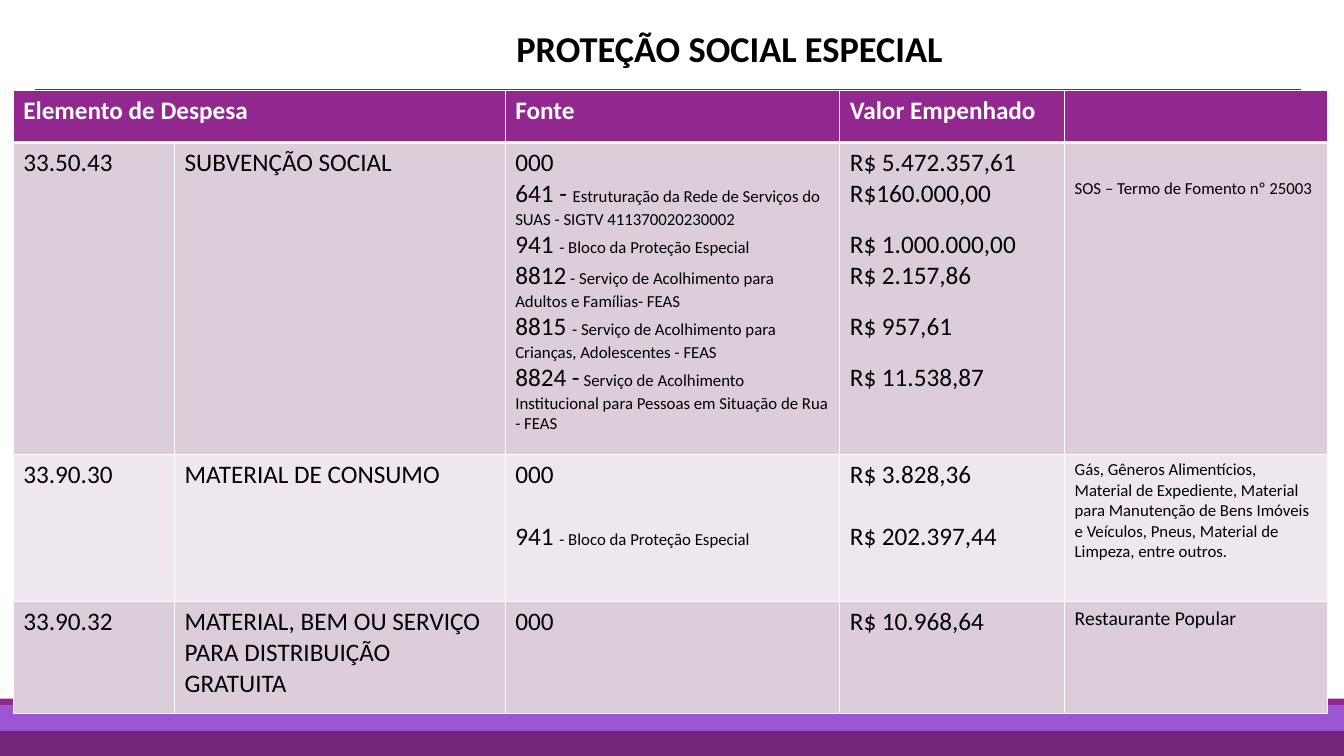
from lxml import etree
from pptx import Presentation
from pptx.dml.color import RGBColor
from pptx.enum.shapes import MSO_CONNECTOR, MSO_SHAPE
from pptx.enum.text import PP_ALIGN
from pptx.oxml.ns import qn
from pptx.util import Pt

RECT = MSO_SHAPE.RECTANGLE
STRAIGHT = MSO_CONNECTOR.STRAIGHT
LEFT, CENTER = PP_ALIGN.LEFT, PP_ALIGN.CENTER

COLORS = {
    "text": "000000", "white": "FFFFFF", "header": "92278F",
    "band": "9B57D3", "base": "6D1D6B", "rule": "632E62",
    "odd": "DCCDDB", "even": "EEE8EE",
}
FONT = "Calibri"
BIG, MEDIUM, SMALL = 18, 14, 12
BIG_LINE, SMALL_LINE = 22, 14.65

COL_WIDTHS = [115.2, 236.2, 239, 160.6, 187.9]
ROW_HEIGHTS = [37, 223, 105, 80]
HEADERS = ["Elemento de Despesa", "", "Fonte", "Valor Empenhado", ""]

# Sources: (code, description, space before); values: (amount, space before);
# note: (text, size, space above).
EXPENSES = [
    ("33.50.43", "SUBVENÇÃO SOCIAL",
     [("000", "", 0),
      ("641 - ", "Estruturação da Rede de Serviços do SUAS - SIGTV 411370020230002", 0),
      ("941 ", "- Bloco da Proteção Especial", 0),
      ("8812", " - Serviço de Acolhimento para Adultos e Famílias- FEAS", 0),
      ("8815 ", "- Serviço de Acolhimento para Crianças, Adolescentes - FEAS", 0),
      ("8824 -", " Serviço de Acolhimento Institucional para Pessoas em "
                 "Situação de Rua - FEAS", 0)],
     [("R$ 5.472.357,61", 0), ("R$160.000,00", 0), ("R$ 1.000.000,00", SMALL_LINE),
      ("R$ 2.157,86", 0), ("R$ 957,61", SMALL_LINE), ("R$ 11.538,87", SMALL_LINE)],
     ("SOS – Termo de Fomento nº 25003", SMALL, BIG_LINE)),
    ("33.90.30", "MATERIAL DE CONSUMO",
     [("000", "", 0), ("941 ", "- Bloco da Proteção Especial", BIG_LINE)],
     [("R$ 3.828,36", 0), ("R$ 202.397,44", BIG_LINE)],
     ("Gás, Gêneros Alimentícios, Material de Expediente, Material para "
      "Manutenção de Bens Imóveis e Veículos, Pneus, Material de Limpeza, "
      "entre outros.", SMALL, 0)),
    ("33.90.32", "MATERIAL, BEM OU SERVIÇO PARA DISTRIBUIÇÃO GRATUITA",
     [("000", "", 0)],
     [("R$ 10.968,64", 0)],
     ("Restaurante Popular", MEDIUM, 0)),
]


def rgb(name):
    return RGBColor.from_string(COLORS[name])


def add_text(p, text, size=BIG, color="text", bold=False, align=LEFT, before=0):
    """Append a formatted run to paragraph p."""
    p.alignment = align
    p.space_before = Pt(before)
    r = p.add_run()
    r.text = text
    r.font.name, r.font.size, r.font.bold = FONT, Pt(size), bold
    r.font.color.rgb = rgb(color)


def paragraph(tf, index):
    return tf.paragraphs[0] if index == 0 else tf.add_paragraph()


def add_bar(slide, left, top, width, height, color, alpha=None):
    sp = slide.shapes.add_shape(RECT, Pt(left), Pt(top), Pt(width), Pt(height))
    sp.shadow.inherit = False
    sp.line.fill.background()
    sp.fill.solid()
    sp.fill.fore_color.rgb = rgb(color)
    if alpha is not None:
        clr = sp.fill._xPr.find(".//" + qn("a:srgbClr"))
        etree.SubElement(clr, qn("a:alpha"), val=str(alpha * 1000))


def add_footer(slide, left, top, width, height):
    """Stack a thin strip, a band and a translucent base inside the box."""
    strip, base = 5, 18
    add_bar(slide, left, top + strip, width, height - strip, "band")
    add_bar(slide, left, top, width, strip, "header")
    add_bar(slide, left, top + height - base, width, base, "base", alpha=85)


def add_title(slide, left, top, width, height):
    """Write the heading in the box, with a rule across the slide below it."""
    rule_y = top + height + 10.7
    rule = slide.shapes.add_connector(STRAIGHT, Pt(25), Pt(rule_y), Pt(929.5), Pt(rule_y))
    rule.line.color.rgb = rgb("rule")
    rule.line.width = Pt(2.25)
    etree.SubElement(rule._element.spPr, qn("a:effectLst"))
    tf = slide.shapes.add_textbox(Pt(left), Pt(top), Pt(width), Pt(height)).text_frame
    tf.word_wrap = True
    add_text(tf.paragraphs[0], "PROTEÇÃO SOCIAL ESPECIAL", size=26, bold=True, align=CENTER)


def style_cell(cell, fill, top=1, bottom=1):
    """Give the cell white borders of the stated widths, then its fill."""
    tc_pr = cell._tc.get_or_add_tcPr()
    for side, width in (("L", 1), ("R", 1), ("T", top), ("B", bottom)):
        ln = etree.SubElement(tc_pr, qn("a:ln" + side), w=str(Pt(width)))
        solid = etree.SubElement(ln, qn("a:solidFill"))
        etree.SubElement(solid, qn("a:srgbClr"), val=COLORS["white"])
    cell.fill.solid()
    cell.fill.fore_color.rgb = rgb(fill)


def fill_expense_row(cells, code, name, sources, values, note):
    add_text(cells[0].text_frame.paragraphs[0], code)
    add_text(cells[1].text_frame.paragraphs[0], name)
    for i, (number, description, before) in enumerate(sources):
        p = paragraph(cells[2].text_frame, i)
        add_text(p, number, before=before)
        if description:
            add_text(p, description, size=SMALL, before=before)
    for i, (amount, before) in enumerate(values):
        add_text(paragraph(cells[3].text_frame, i), amount, before=before)
    text, size, above = note
    cells[4].margin_top = Pt(3.6 + above)
    add_text(cells[4].text_frame.paragraphs[0], text, size=size)


def add_expense_table(slide, left, top, width, height):
    frame = slide.shapes.add_table(len(ROW_HEIGHTS), len(COL_WIDTHS),
                                   Pt(left), Pt(top), Pt(width), Pt(height))
    table = frame.table
    table.first_row = table.horz_banding = False
    for column, w in zip(table.columns, COL_WIDTHS):
        column.width = Pt(w)
    for row, h in zip(table.rows, ROW_HEIGHTS):
        row.height = Pt(h)

    for cell, text in zip(table.rows[0].cells, HEADERS):
        style_cell(cell, "header", bottom=3)
        if text:
            add_text(cell.text_frame.paragraphs[0], text, color="white", bold=True)
    table.cell(0, 0).merge(table.cell(0, 1))

    for i, expense in enumerate(EXPENSES, start=1):
        cells = list(table.rows[i].cells)
        for cell in cells:
            style_cell(cell, "odd" if i % 2 else "even", top=3 if i == 1 else 1)
        fill_expense_row(cells, *expense)


def main():
    prs = Presentation()
    prs.slide_width, prs.slide_height = Pt(960), Pt(540)
    slide = prs.slides.add_slide(prs.slide_layouts[6])
    add_footer(slide, 0, 499, 960, 41)
    add_title(slide, 360, 15, 322.5, 39)
    add_expense_table(slide, 9.5, 64.8, sum(COL_WIDTHS), sum(ROW_HEIGHTS))
    prs.save("out.pptx")


if __name__ == "__main__":
    main()
